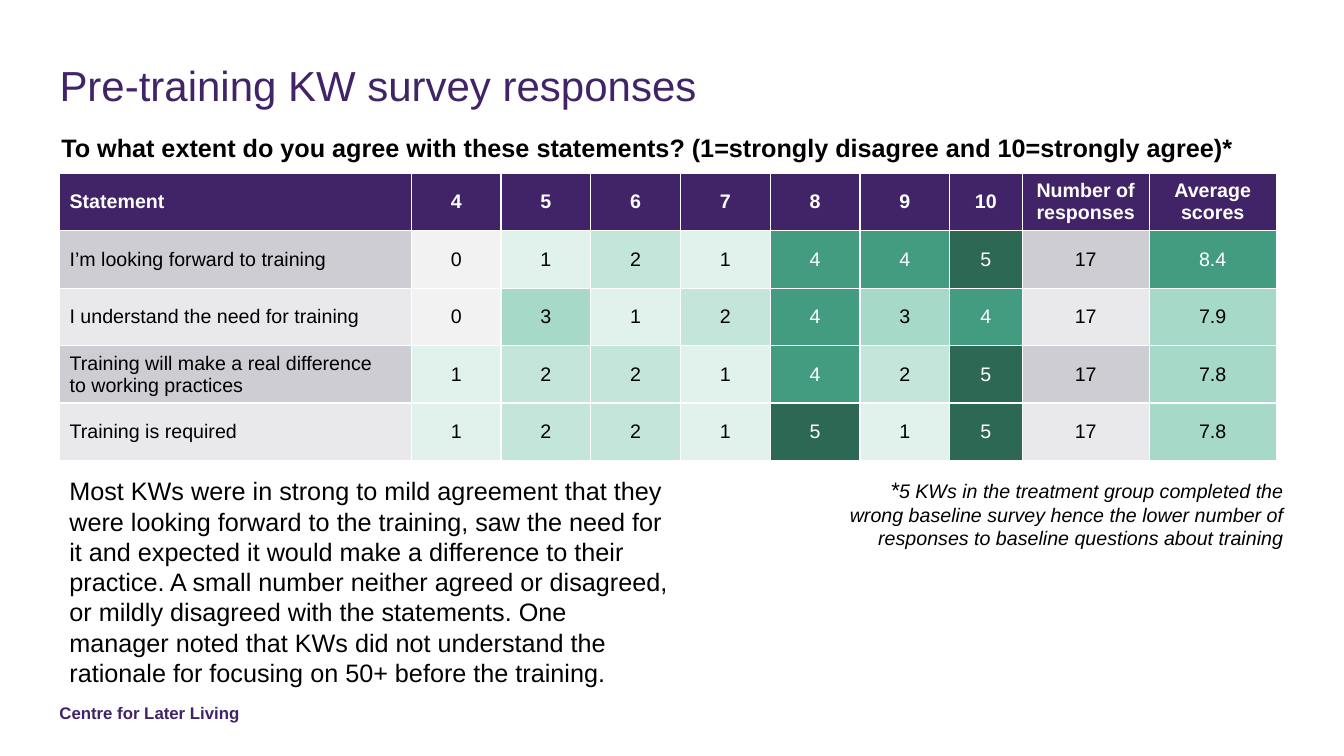
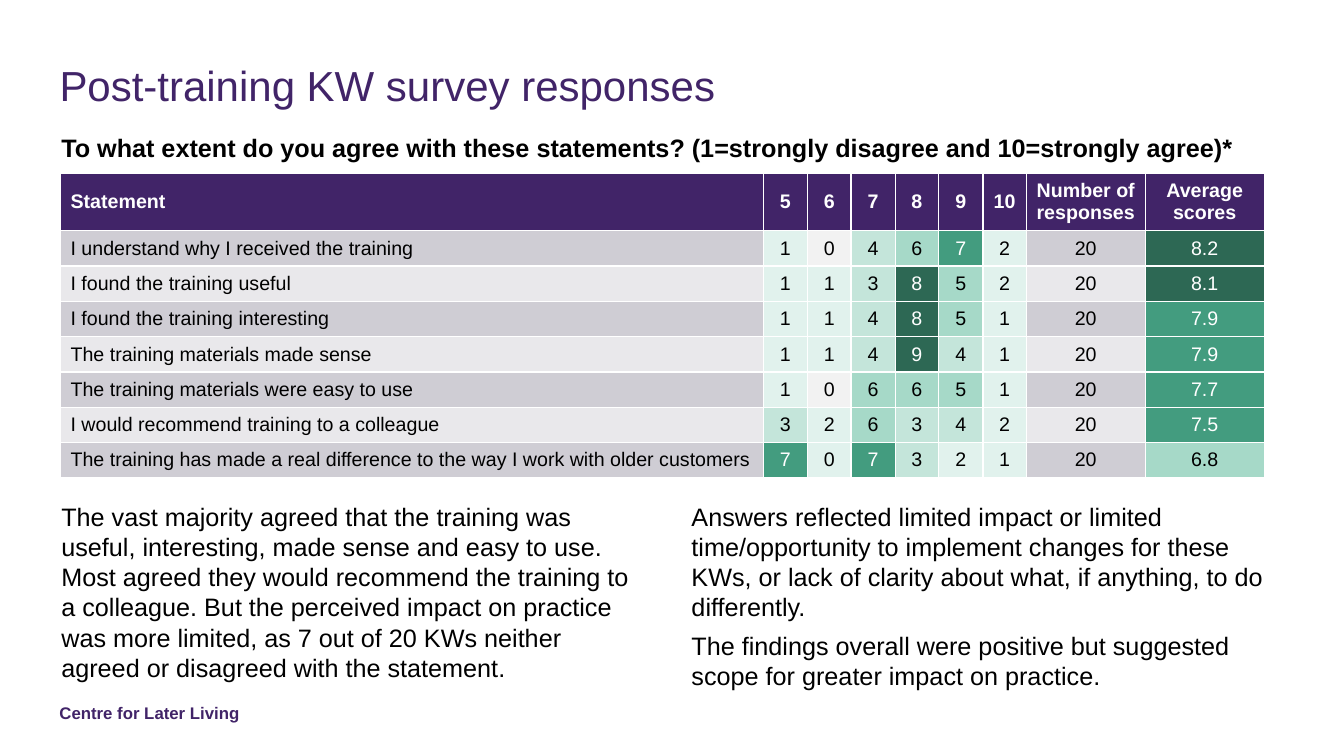
from pptx import Presentation
from pptx import util as u
from pptx.dml.color import RGBColor
from pptx.enum import text as t

PURPLE = RGBColor(0x41, 0x24, 0x68)
WHITE = RGBColor(0xFF, 0xFF, 0xFF)
BLACK = RGBColor(0x00, 0x00, 0x00)
BANDS = [RGBColor(0xCF, 0xCD, 0xD4), RGBColor(0xE9, 0xE8, 0xEB)]
SHADES = [
    RGBColor(0xF2, 0xF2, 0xF2),
    RGBColor(0xE1, 0xF2, 0xED),
    RGBColor(0xC4, 0xE5, 0xDA),
    RGBColor(0xA6, 0xD9, 0xC8),
    RGBColor(0x43, 0x9C, 0x7F),
    RGBColor(0x2D, 0x68, 0x54),
]
DARK = 4
LEFT, MID, RIGHT = t.PP_ALIGN.LEFT, t.PP_ALIGN.CENTER, t.PP_ALIGN.RIGHT
BASE = {"name": "Arial", "bold": False, "italic": False}
ASK = "To what extent do you agree with these statements? (1=strongly disagree and 10=strongly agree)*"
ENDS = ["Number of responses", "Average scores"]


def write(para, words, size, color=BLACK, align=LEFT, **look):
    para.alignment = align
    run = para.add_run()
    run.text = words
    for key, value in {**BASE, "size": u.Pt(size), **look}.items():
        setattr(run.font, key, value)
    run.font.color.rgb = color


def frame(slide, place, inset=True):
    box = slide.shapes.add_textbox(*map(u.Inches, place))
    body = box.text_frame
    body.word_wrap = True
    if not inset:
        body.margin_left = body.margin_right = body.margin_top = body.margin_bottom = 0
    return box, body


pages = [
    {
        "title": "Pre-training KW survey responses",
        "left": 0.59,
        "cols": [3.49] + [0.89] * 6 + [0.72, 1.26, 1.26],
        "high": 0.57,
        "first": 4,
        "steps": (1, 2, 3, 4, 5),
        "means": (0, 0, 0, 8),
        "rows": [
            ("I’m looking forward to training", 0, 1, 2, 1, 4, 4, 5, 17, 8.4),
            ("I understand the need for training", 0, 3, 1, 2, 4, 3, 4, 17, 7.9),
            ("Training will make a real difference\vto working practices", 1, 2, 2, 1, 4, 2, 5, 17, 7.8),
            ("Training is required", 1, 2, 2, 1, 5, 1, 5, 17, 7.8),
        ],
        "odd": {},
        "notes": [
            ((0.59, 4.67, 6.16, 2.22), [
                "Most KWs were in strong to mild agreement that they were looking forward to the training, "
                "saw the need for it and expected it would make a difference to their practice. "
                "A small number neither agreed or disagreed, or mildly disagreed with the statements. "
                "One manager noted that KWs did not understand the rationale for focusing on 50+ before the training.",
            ]),
        ],
    },
    {
        "title": "Post-training KW survey responses",
        "left": 0.6,
        "cols": [6.97] + [0.44, 0.43] * 3 + [1.18, 1.18],
        "high": 0.35,
        "first": 5,
        "steps": (1, 3, 5, 7, 8),
        "means": (0, 0, 0, 7, 8),
        "rows": [
            ("I understand why I received the training", 1, 0, 4, 6, 7, 2, 20, 8.2),
            ("I found the training useful", 1, 1, 3, 8, 5, 2, 20, 8.1),
            ("I found the training interesting", 1, 1, 4, 8, 5, 1, 20, 7.9),
            ("The training materials made sense", 1, 1, 4, 9, 4, 1, 20, 7.9),
            ("The training materials were easy to use", 1, 0, 6, 6, 5, 1, 20, 7.7),
            ("I would recommend training to a colleague", 3, 2, 6, 3, 4, 2, 20, 7.5),
            ("The training has made a real difference to the way I work with older customers",
             7, 0, 7, 3, 2, 1, 20, 6.8),
        ],
        "odd": {(7, 2): 1},
        "notes": [
            ((0.51, 4.92, 5.91, 1.92), [
                "The vast majority agreed that the training was useful, interesting, made sense and easy to use. "
                "Most agreed they would recommend the training to a colleague. "
                "But the perceived impact on practice was more limited, as 7 out of 20 KWs neither agreed "
                "or disagreed with the statement.",
            ]),
            ((6.76, 4.92, 5.91, 2), [
                "Answers reflected limited impact or limited time/opportunity to implement changes for these KWs, "
                "or lack of clarity about what, if anything, to do differently.",
                "The findings overall were positive but suggested scope for greater impact on practice.",
            ]),
        ],
    },
]

deck = Presentation()
deck.slide_width, deck.slide_height = u.Inches(13.33), u.Inches(7.5)
plan = deck.slide_layouts[5]
slides = [deck.slides.add_slide(plan) for page in pages]

box, body = frame(slides[0], (0.59, 6.97, 3.56, 0.2), inset=False)
write(body.paragraphs[0], "Centre for Later Living", 12, PURPLE, bold=True)
plan.shapes.element.append(box.element)

for slide, page in zip(slides, pages):
    head = slide.shapes.title
    head.left, head.top, head.width, head.height = map(u.Inches, (0.59, 0.59, 12.15, 1.13))
    body = head.text_frame
    for key, value in {
        "margin_left": 0, "margin_right": 0, "margin_top": 0, "margin_bottom": 0,
        "vertical_anchor": t.MSO_ANCHOR.TOP, "auto_size": t.MSO_AUTO_SIZE.NONE,
    }.items():
        setattr(body, key, value)
    body.paragraphs[0].line_spacing = u.Pt(36)
    write(body.paragraphs[0], page["title"], 30, PURPLE)

    cols, rows = page["cols"], page["rows"]
    names = ["Statement", *range(page["first"], 11), *ENDS]
    highs = [0.57] + [page["high"]] * len(rows)
    place = map(u.Inches, (page["left"], 1.72, sum(cols), sum(highs)))
    grid = slide.shapes.add_table(len(highs), len(cols), *place).table
    for col, wide in zip(grid.columns, cols):
        col.width = u.Inches(wide)
    for row, high in zip(grid.rows, highs):
        row.height = u.Inches(high)

    last = len(cols) - 1
    for r, line in enumerate([names, *rows]):
        for c, value in enumerate(line):
            if r == 0:
                fill, ink = PURPLE, WHITE
            elif c in (0, last - 1):
                fill, ink = BANDS[(r - 1) % 2], BLACK
            else:
                steps = page["means"] if c == last else page["steps"]
                level = page["odd"].get((r, c), sum(value >= step for step in steps))
                fill, ink = SHADES[level], WHITE if level >= DARK else BLACK
            cell = grid.cell(r, c)
            cell.fill.solid()
            cell.fill.fore_color.rgb = fill
            cell.vertical_anchor = t.MSO_ANCHOR.MIDDLE
            para = cell.text_frame.paragraphs[0]
            first, *rest = str(value).split("\v")
            align = MID if c else LEFT
            write(para, first, 14, ink, align, bold=r == 0)
            for part in rest:
                para.add_line_break()
                write(para, part, 14, ink, align)

    box, body = frame(slide, (0.51, 1.26, 12.15, 0.4))
    write(body.paragraphs[0], ASK, 18, bold=True)

    for place, paras in page["notes"]:
        box, body = frame(slide, place)
        for n, words in enumerate(paras):
            para = body.add_paragraph() if n else body.paragraphs[0]
            if n:
                para.space_before = para.space_after = u.Pt(6)
            write(para, words, 18)

box, body = frame(slides[0], (8.31, 4.67, 4.52, 0.84))
para = body.paragraphs[0]
write(para, "*", 16, align=RIGHT, italic=True)
write(para, "5 KWs in the treatment group completed the wrong baseline survey hence the lower number of "
      "responses to baseline questions about training", 14, align=RIGHT, italic=True)

deck.save("out.pptx")
